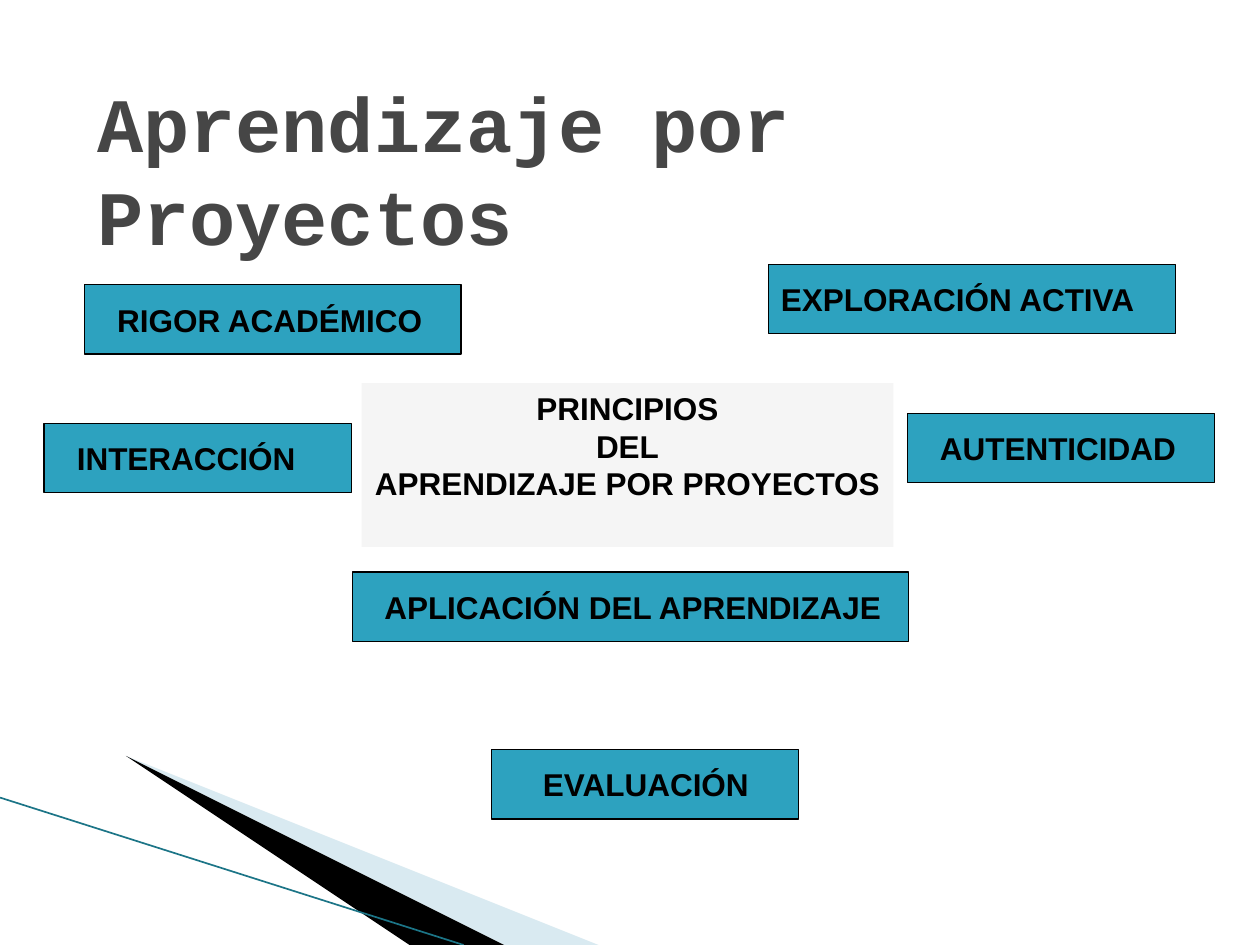
import pptx
import pptx.dml.color
import pptx.enum.shapes
import pptx.enum.text
import pptx.oxml
import pptx.oxml.ns
import pptx.util
from pptx.util import Inches

RECTANGLE = pptx.enum.shapes.MSO_SHAPE.RECTANGLE
ALIGN = pptx.enum.text.PP_ALIGN
ANCHOR = pptx.enum.text.MSO_ANCHOR

# text, left, top, width, left inset
PRINCIPLES = [
    ("RIGOR ACADÉMICO", 0.67, 2.26, 2.99, 0.26),
    ("APLICACIÓN DEL APRENDIZAJE", 2.8, 4.54, 4.41, 0.25),
    ("EXPLORACIÓN ACTIVA", 6.1, 2.1, 3.23, 0.1),
    ("INTERACCIÓN", 0.35, 3.36, 2.44, 0.26),
    ("EVALUACIÓN", 3.9, 5.95, 2.44, 0.41),
    ("AUTENTICIDAD", 7.2, 3.28, 2.44, 0.26),
]
PRINCIPLE_HEIGHT = 0.55


def rgb(color):
    return pptx.dml.color.RGBColor.from_string(color)


def set_font(p, name, size, color):
    p.font.name = name
    p.font.size = pptx.util.Pt(size)
    p.font.bold = True
    p.font.color.rgb = rgb(color)


def add_wedge(slide, points, color, alpha=None):
    """Add a borderless polygon; alpha is its opacity in percent."""
    builder = slide.shapes.build_freeform(*points[0], scale=Inches(1))
    builder.add_line_segments(points[1:], close=True)
    s = builder.convert_to_shape()
    s.shadow.inherit = False
    s.fill.solid()
    s.fill.fore_color.rgb = rgb(color)
    s.line.fill.background()
    if alpha is not None:
        clr = s._element.spPr.find(".//" + pptx.oxml.ns.qn("a:srgbClr"))
        clr.append(pptx.oxml.parse_xml(
            f'<a:alpha {pptx.oxml.ns.nsdecls("a")} val="{alpha * 1000}"/>'))


def add_corner(slide, left, top, bottom):
    """Draw the slanted decoration in the lower left corner."""
    x, y = left + 0.55, top + 0.17
    add_wedge(slide, [(x, y), (left + 5.95, bottom), (left + 4.56, bottom)],
              "A0CBDC", alpha=40)
    add_wedge(slide, [(x, y), (left + 4.53, bottom), (left + 3.68, bottom)],
              "000000")
    edge = slide.shapes.add_connector(
        pptx.enum.shapes.MSO_CONNECTOR.STRAIGHT,
        Inches(left), Inches(top), Inches(left + 3.68), Inches(bottom))
    edge.line.color.rgb = rgb("1C7587")
    edge.line.width = pptx.util.Pt(0.95)
    edge._element.spPr.append(pptx.oxml.parse_xml(
        f'<a:effectLst {pptx.oxml.ns.nsdecls("a")}/>'))


def add_box(slide, left, top, width, height, fill):
    s = slide.shapes.add_shape(RECTANGLE, Inches(left), Inches(top),
                               Inches(width), Inches(height))
    s.shadow.inherit = False
    s.fill.solid()
    s.fill.fore_color.rgb = rgb(fill)
    s.line.fill.background()
    s.text_frame.word_wrap = False
    return s


def add_principle(slide, text, left, top, width, inset):
    s = add_box(slide, left, top, width, PRINCIPLE_HEIGHT, "2DA2BF")
    s.line.color.rgb = rgb("000000")
    s.line.width = pptx.util.Pt(0.75)
    tf = s.text_frame
    tf.margin_left = Inches(inset)
    tf.margin_right = 0
    tf.vertical_anchor = ANCHOR.MIDDLE
    p = tf.paragraphs[0]
    p.text = text
    p.alignment = ALIGN.LEFT
    set_font(p, "Arial", 18, "000000")


def add_center(slide, left, top, width, height):
    tf = add_box(slide, left, top, width, height, "F5F5F5").text_frame
    tf.vertical_anchor = ANCHOR.TOP
    tf.text = "PRINCIPIOS\nDEL\nAPRENDIZAJE POR PROYECTOS"
    for p in tf.paragraphs:
        p.alignment = ALIGN.CENTER
        p.line_spacing = pptx.util.Pt(21.5)
        set_font(p, "Arial", 18, "000000")


def place_title(slide, left, top, width, height):
    s = slide.shapes.title
    s.left, s.top = Inches(left), Inches(top)
    s.width, s.height = Inches(width), Inches(height)
    tf = s.text_frame
    tf.word_wrap = True
    tf.auto_size = pptx.enum.text.MSO_AUTO_SIZE.NONE
    tf.vertical_anchor = ANCHOR.TOP
    p = tf.paragraphs[0]
    p.text = "Aprendizaje por Proyectos"
    p.alignment = ALIGN.LEFT
    p.line_spacing = pptx.util.Pt(53)
    set_font(p, "Courier New", 44, "464646")


def main():
    prs = pptx.Presentation()
    prs.slide_width, prs.slide_height = Inches(10), Inches(7.5)
    slide = prs.slides.add_slide(prs.slide_layouts[5])
    add_corner(slide, 0, 6.33, 7.5)
    for principle in PRINCIPLES:
        add_principle(slide, *principle)
    add_center(slide, 2.87, 3.04, 4.22, 1.3)
    place_title(slide, 0.67, 0.55, 8.35, 1.58)
    prs.save("out.pptx")


if __name__ == "__main__":
    main()
